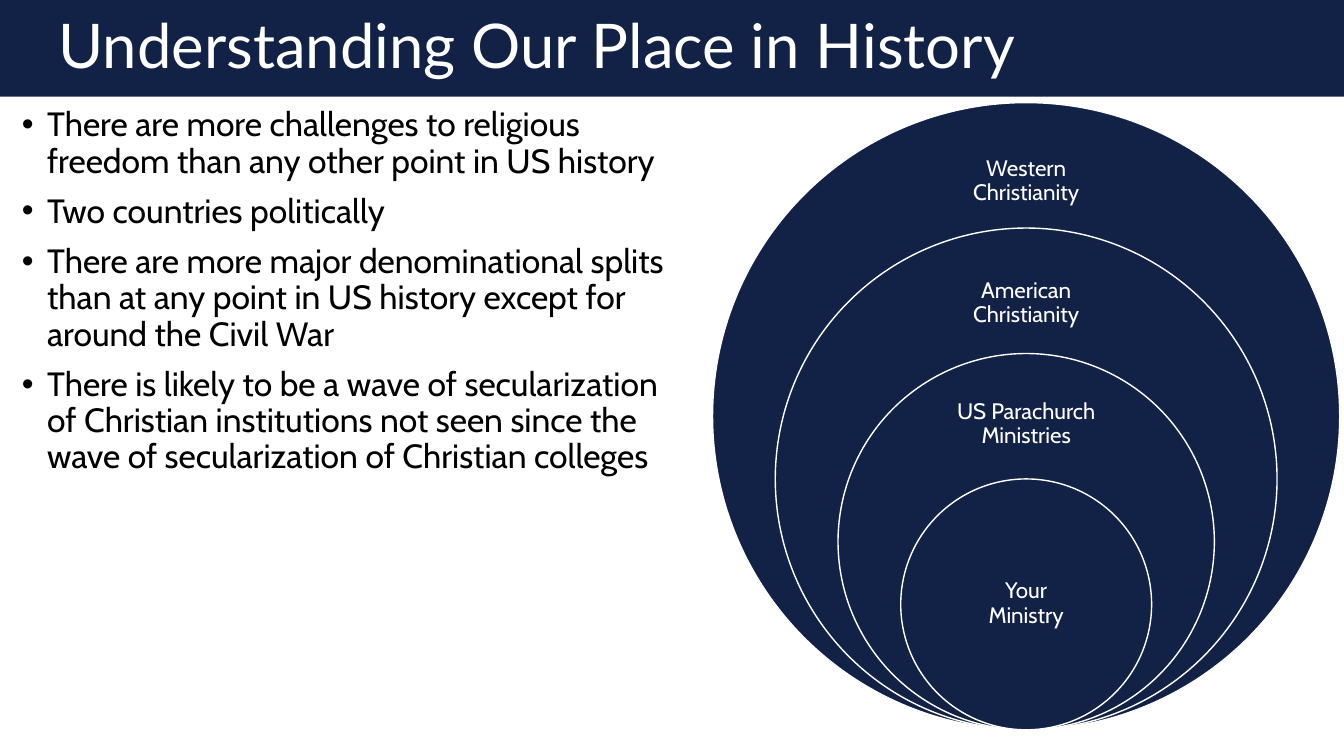
from dataclasses import dataclass

from lxml.etree import SubElement
from pptx import Presentation
from pptx.dml.color import RGBColor as RGB
from pptx.enum.shapes import MSO_SHAPE as Kind
from pptx.enum.text import MSO_ANCHOR as Anchor, MSO_AUTO_SIZE as Fit, PP_ALIGN as Align
from pptx.oxml.ns import qn
from pptx.util import Pt


@dataclass(frozen=True)
class Theme:
    navy: RGB = RGB(0x12, 0x21, 0x46)
    white: RGB = RGB(255, 255, 255)
    black: RGB = RGB(0, 0, 0)
    head: str = "Lato"
    body: str = "Cabin"
    big: int = 44
    mid: int = 24
    small: int = 16


THEME = Theme()
TITLE = "Understanding Our Place in History"
POINTS = [
    "There are more challenges to religious freedom than any other point in US history",
    "Two countries politically",
    "There are more major denominational splits than at any point in US history except for around the Civil War",
    "There is likely to be a wave of secularization of Christian institutions not seen since the wave of secularization of Christian colleges",
]
# Label, its top and its height, from the outer ring inwards
RINGS = [
    ("Western Christianity", 95.8, 67),
    ("American Christianity", 184.3, 64.8),
    ("US Parachurch Ministries", 272.9, 60.5),
    ("Your\nMinistry", 386.6, 89.3),
]
MID_X, BASE, WIDEST = 733, 521.3, 448
LABEL_W, INSET = 126, 8.6


def style(para, face, size, color, align=Align.LEFT):
    para.alignment = align
    para.line_spacing = 0.9
    font = para.font
    font.name, font.size = face, Pt(size)
    font.color.rgb = color


def add_solid(slide, kind, x, y, w, h):
    shape = slide.shapes.add_shape(kind, Pt(x), Pt(y), Pt(w), Pt(h))
    shape.shadow.inherit = False
    shape.fill.solid()
    shape.fill.fore_color.rgb = THEME.navy
    return shape


def add_box(slide, x, y, w, h):
    frame = slide.shapes.add_textbox(Pt(x), Pt(y), Pt(w), Pt(h)).text_frame
    frame.word_wrap = True
    return frame


def add_title(slide):
    title = slide.shapes.title
    title.left, title.top, title.width, title.height = Pt(34.6), Pt(8), Pt(882.7), Pt(53.3)
    frame = title.text_frame
    frame.text = TITLE
    frame.auto_size = Fit.NONE
    frame.vertical_anchor = Anchor.MIDDLE
    style(frame.paragraphs[0], THEME.head, THEME.big, THEME.white)

    # The band lies behind the title
    band = add_solid(slide, Kind.RECTANGLE, 0, 0, 960, 69)
    band.line.fill.background()
    title.element.addprevious(band.element)


def add_list(slide):
    frame = add_box(slide, 8.6, 73.4, 489.6, 447.8)
    for i, point in enumerate(POINTS):
        para = frame.add_paragraph() if i else frame.paragraphs[0]
        para.text = point
        para.space_before = Pt(10 if i else 0)
        props = para._p.get_or_add_pPr()
        props.set("marL", str(Pt(18)))
        props.set("indent", str(-Pt(18)))
        SubElement(props, qn("a:buFont"), typeface="Arial")
        SubElement(props, qn("a:buChar"), char="•")
        style(para, THEME.body, THEME.mid, THEME.black)


def add_ring(slide, size):
    ring = add_solid(slide, Kind.OVAL, MID_X - size / 2, BASE - size, size, size)
    ring.line.color.rgb = THEME.white
    ring.line.width = Pt(1)


def add_label(slide, text, top, high):
    frame = add_box(slide, MID_X - LABEL_W / 2, top, LABEL_W, high)
    frame.margin_left = frame.margin_right = Pt(INSET)
    frame.margin_top = frame.margin_bottom = Pt(INSET)
    frame.vertical_anchor = Anchor.MIDDLE
    para = frame.paragraphs[0]
    para.text = text
    style(para, THEME.body, THEME.small, THEME.white, Align.CENTER)


def main():
    deck = Presentation()
    deck.slide_width, deck.slide_height = Pt(960), Pt(540)
    slide = deck.slides.add_slide(deck.slide_layouts.get_by_name("Title Only"))

    add_title(slide)
    add_list(slide)

    # Nested circles share their lowest point, each a fifth of the widest smaller
    for i, (text, top, high) in enumerate(RINGS):
        add_ring(slide, WIDEST * (5 - i) / 5)
        add_label(slide, text, top, high)

    deck.save("out.pptx")


if __name__ == "__main__":
    main()
